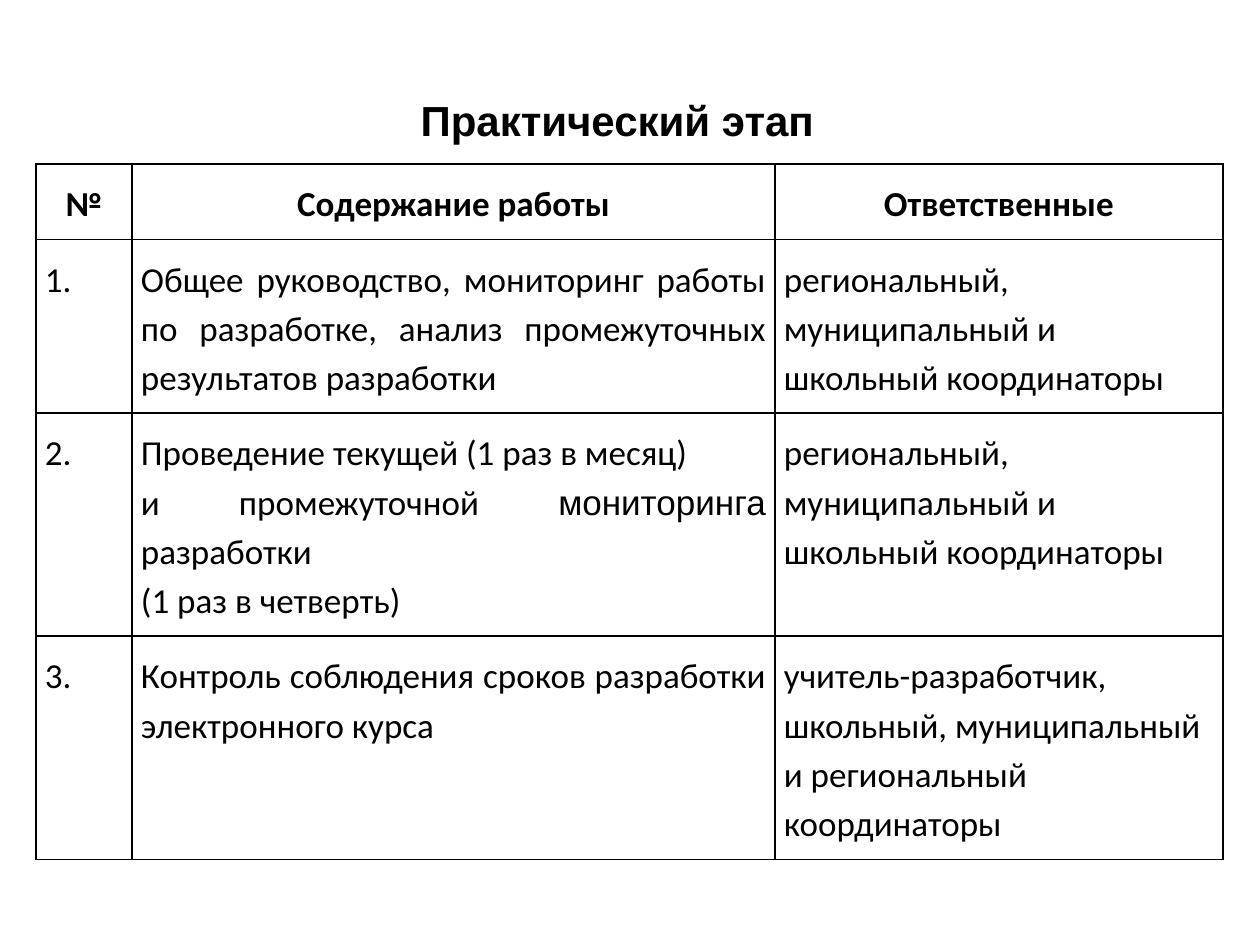
import pptx
import pptx.util
import pptx.dml.color
import pptx.enum.text
import pptx.oxml
import pptx.oxml.ns

PX = 914400 // 126
COLORS = {"ink": "000000", "paper": "FFFFFF"}
ALIGN = pptx.enum.text.PP_ALIGN
ANCHOR = pptx.enum.text.MSO_ANCHOR

TEAM = "региональный, муниципальный и школьный координаторы"
HEAD = ["№", "Содержание работы", "Ответственные"]
# A cell is a list of paragraphs; "|" marks a switch between the two fonts
ROWS = [
    [["1."],
     ["Общее руководство, мониторинг работы по разработке, "
      "анализ промежуточных результатов разработки"],
     [TEAM]],
    [["2."],
     ["Проведение текущей (1 раз в месяц)",
      "и промежуточной |мониторинга| разработки",
      "(1 раз в четверть)"],
     [TEAM]],
    [["3."],
     ["Контроль соблюдения сроков разработки электронного курса"],
     ["учитель-разработчик, школьный, муниципальный "
      "и региональный координаторы"]],
]
WIDTHS = [96, 643, 448]
HEIGHTS = [74, 173, 222, 222]


def px(num):
    return pptx.util.Emu(num * PX)


def rgb(name):
    return pptx.dml.color.RGBColor.from_string(COLORS[name])


def style(run, face, size, bold):
    run.font.name = face
    run.font.size = pptx.util.Pt(size)
    run.font.bold = bold
    run.font.color.rgb = rgb("ink")


def write(para, text, align, bold):
    first, *rest = text.split("|")
    para.text = first
    for part in rest:
        para.add_run().text = part
    para.alignment = align
    para.line_spacing = 1.15
    for num, run in enumerate(para.runs):
        style(run, "Arial" if num % 2 else "Calibri", 20, bold)


def border(cell):
    props = cell._tc.get_or_add_tcPr()
    for num, side in enumerate(("lnL", "lnR", "lnT", "lnB")):
        props.insert(num, pptx.oxml.parse_xml(
            f'<a:{side} {pptx.oxml.ns.nsdecls("a")} w="12700"><a:solidFill>'
            f'<a:srgbClr val="{COLORS["ink"]}"/></a:solidFill></a:{side}>'))


def fill(cell, lines, align, bold):
    cell.fill.solid()
    cell.fill.fore_color.rgb = rgb("paper")
    border(cell)
    cell.margin_left = cell.margin_right = px(9)
    cell.margin_top = cell.margin_bottom = px(13)
    cell.vertical_anchor = ANCHOR.TOP
    frame = cell.text_frame
    frame.text = "\n".join(lines)
    for para, line in zip(frame.paragraphs, lines):
        write(para, line, align, bold)


def title(slide, left, top, width, height):
    shape = slide.shapes.title
    shape.left, shape.top = px(left), px(top)
    shape.width, shape.height = px(width), px(height)
    frame = shape.text_frame
    frame.text = "Практический этап"
    frame.word_wrap = True
    frame.auto_size = pptx.enum.text.MSO_AUTO_SIZE.NONE
    frame.vertical_anchor = ANCHOR.MIDDLE
    para = frame.paragraphs[0]
    para.alignment = ALIGN.JUSTIFY
    para.line_spacing = 1.15
    style(para.runs[0], "Arial", 24, True)


def table(slide, left, top):
    grid = slide.shapes.add_table(
        len(HEIGHTS), len(WIDTHS), px(left), px(top),
        px(sum(WIDTHS)), px(sum(HEIGHTS))).table
    for col, width in zip(grid.columns, WIDTHS):
        col.width = px(width)
    for row, height in zip(grid.rows, HEIGHTS):
        row.height = px(height)
    # Header row
    for col, text in enumerate(HEAD):
        fill(grid.cell(0, col), [text], ALIGN.CENTER, True)
    # Body rows
    aligns = [ALIGN.JUSTIFY, ALIGN.JUSTIFY, ALIGN.LEFT]
    for row, cells in enumerate(ROWS, 1):
        for col, lines in enumerate(cells):
            fill(grid.cell(row, col), lines, aligns[col], False)


def main():
    deck = pptx.Presentation()
    deck.slide_width, deck.slide_height = px(1260), px(945)
    slide = deck.slides.add_slide(deck.slide_layouts[5])
    title(slide, 408, 87, 490, 58)
    table(slide, 36, 164)
    deck.save("out.pptx")


if __name__ == "__main__":
    main()
